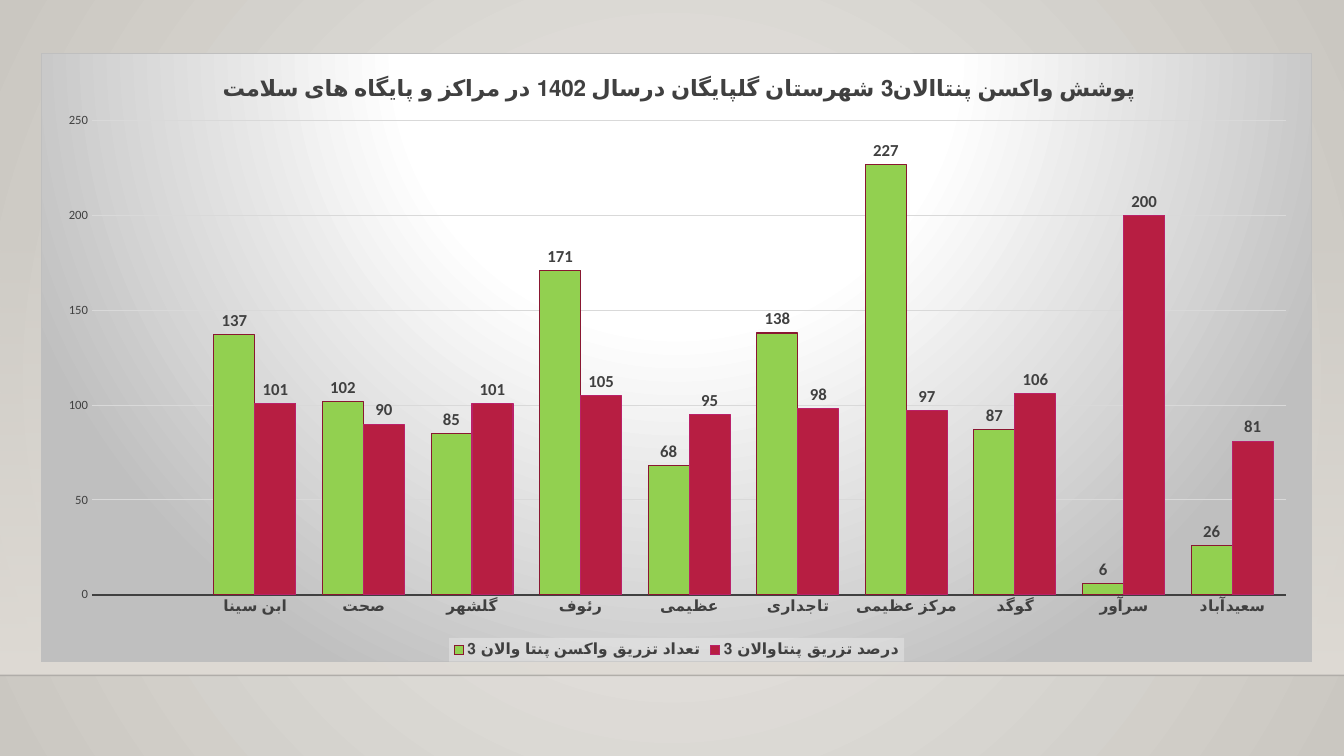
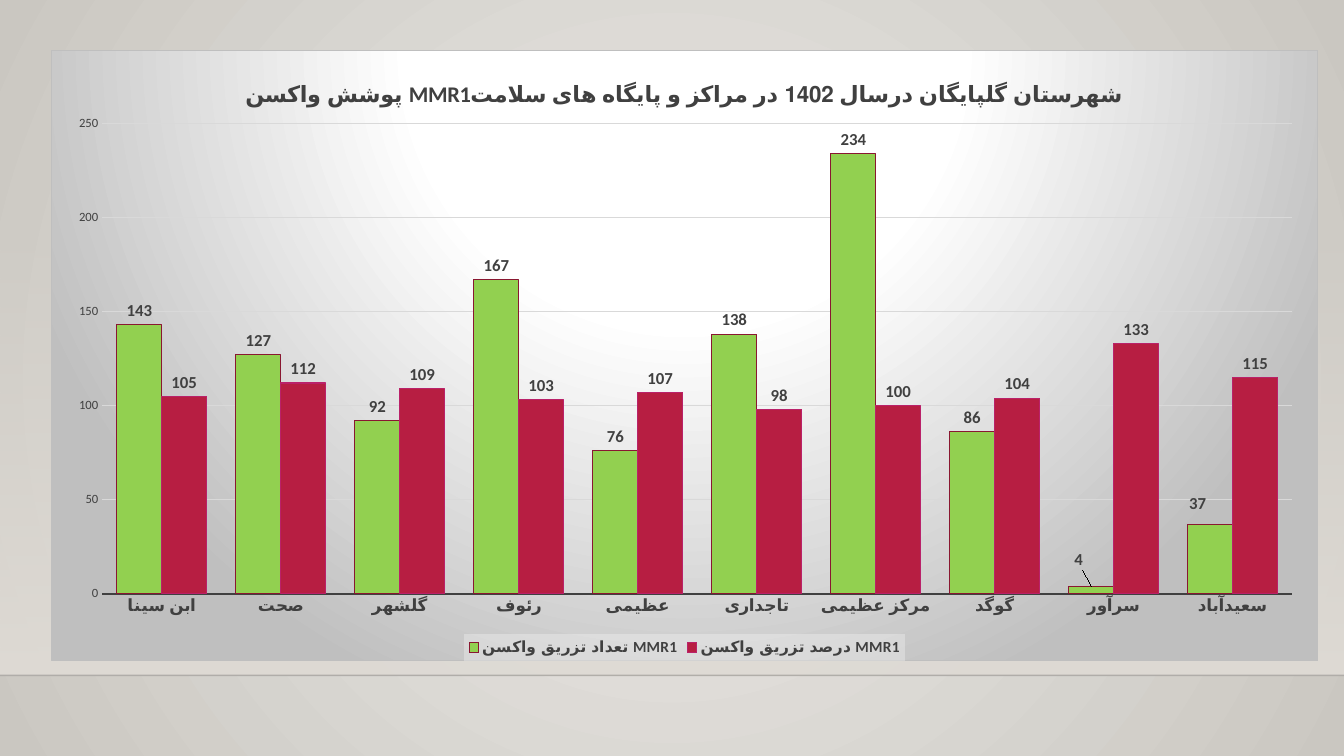
from dataclasses import dataclass, field
from typing import Optional

from pptx import Presentation, util as u
from pptx.chart import data as cd
from pptx.dml import color
from pptx.enum import chart as ce, shapes
from pptx.oxml import ns, parse_xml

FONT = "Calibri"
COLORS = {
    "bg_light": "ECEAE7", "bg_dark": "CAC7C1", "band": "DFDBD5", "rule": "000001",
    "text": "404040", "grid": "D9D9D9", "legend": "F2F2F2",
    "white": "FFFFFF", "grey": "BFBFBF",
    "count": "92D050", "count_line": "891731",
    "percent": "B71E42", "percent_line": "BA2169",
}
SERIES_STYLE = [("count", "count_line"), ("percent", "percent_line")]
CENTRES = ["ابن سینا", "صحت", "گلشهر", "رئوف", "عظیمی", "تاجداری",
           "مرکز عظیمی", "گوگد", "سرآور", "سعیدآباد"]


@dataclass
class CoverageChart:
    title: str
    box: tuple            # left, top, width, height in points
    title_at: tuple       # fractions of the chart
    plot_area: tuple      # fractions of the chart
    categories: list
    series: dict
    category_size: int
    label_shifts: dict = field(default_factory=dict)  # point of the first series: shift


CHARTS = [
    CoverageChart(
        "پوشش واکسن پنتاالان3 شهرستان گلپایگان درسال 1402 در مراکز و پایگاه های سلامت",
        (29, 38, 908.5, 435), (0.14, 0.03), (0.04, 0.11, 0.94, 0.78),
        ["", *CENTRES],
        {"تعداد تزریق واکسن پنتا والان 3":
            [None, 137, 102, 85, 171, 68, 138, 227, 87, 6, 26],
         "درصد تزریق پنتاوالان 3":
            [None, 101, 90, 101, 105, 95, 98, 97, 106, 200, 81]},
        11),
    CoverageChart(
        "پوشش واکسن MMR1شهرستان گلپایگان درسال 1402 در مراکز و پایگاه های سلامت",
        (36.5, 35.5, 905, 437), (0.15, 0.04), (0.04, 0.12, 0.94, 0.77),
        CENTRES,
        {"تعداد تزریق واکسن MMR1": [143, 127, 92, 167, 76, 138, 234, 86, 4, 37],
         "درصد تزریق واکسن MMR1": [105, 112, 109, 103, 107, 98, 100, 104, 133, 115]},
        12, {8: (-0.01, -0.02), 9: (-0.01, -0.01)}),
]


def rgb(name: str) -> color.RGBColor:
    return color.RGBColor.from_string(COLORS[name])


def solid_xml(name: str, alpha: int = 100, tag: str = "solidFill") -> str:
    return (f'<a:{tag} {ns.nsdecls("a")}><a:srgbClr val="{COLORS[name]}">'
            f'<a:alpha val="{alpha * 1000}"/></a:srgbClr></a:{tag}>')


def gradient_xml(stops: list, rect: Optional[tuple] = None) -> str:
    """Stops are (position, colour, alpha); rect gives a circular focus, else top to bottom."""
    gs = "".join(f'<a:gs pos="{pos * 1000}"><a:srgbClr val="{COLORS[name]}">'
                 f'<a:alpha val="{alpha * 1000}"/></a:srgbClr></a:gs>'
                 for pos, name, alpha in stops)
    shade = '<a:lin ang="5400000" scaled="0"/>'
    if rect:
        sides = " ".join(f'{side}="{v * 1000}"' for side, v in zip("ltrb", rect))
        shade = f'<a:path path="circle"><a:fillToRect {sides}/></a:path>'
    return (f'<a:gradFill {ns.nsdecls("a")} rotWithShape="1">'
            f'<a:gsLst>{gs}</a:gsLst>{shade}</a:gradFill>')


def replace_fill(parent, xml: str) -> None:
    parent.replace(parent.find(ns.qn("a:solidFill")), parse_xml(xml))


def set_layout(parent, index: int, place: tuple, edge: bool = True) -> None:
    """Place a chart part by fractions of the chart, from its edge or as a shift."""
    old = parent.find(ns.qn("c:layout"))
    if old is not None:
        parent.remove(old)
    parts = ['<c:layoutTarget val="inner"/>'] if len(place) == 4 else []
    if edge:
        parts += ['<c:xMode val="edge"/>', '<c:yMode val="edge"/>']
    parts += [f'<c:{key} val="{v}"/>' for key, v in zip("xywh", place)]
    parent.insert(index, parse_xml(
        f'<c:layout {ns.nsdecls("c")}><c:manualLayout>{"".join(parts)}'
        '</c:manualLayout></c:layout>'))


def style_font(font, size: float, bold: bool = True) -> None:
    font.name, font.size, font.bold = FONT, u.Pt(size), bold
    font.color.rgb = rgb("text")


def style_line(line, name: str, width: float) -> None:
    line.color.rgb = rgb(name)
    line.width = u.Pt(width)


def build_master(prs, s) -> None:
    """Give the master its background, band and rule (drawn on s, then moved)."""
    master = prs.slide_master
    master.background.fill.solid()
    replace_fill(master.element.find(".//" + ns.qn("p:bgPr")), gradient_xml(
        [(0, "bg_light", 100), (100, "bg_dark", 100)], (50, 50, 50, 50)))

    band = s.shapes.add_shape(shapes.MSO_SHAPE.RECTANGLE,
                              0, u.Pt(159), prs.slide_width, u.Pt(323.4))
    band.shadow.inherit = False
    band.line.fill.background()
    band.fill.solid()
    replace_fill(band.element.spPr, gradient_xml([(0, "band", 0), (100, "band", 100)]))

    rule = s.shapes.add_connector(shapes.MSO_CONNECTOR.STRAIGHT,
                                  0, u.Pt(482.4), prs.slide_width, u.Pt(482.4))
    style_line(rule.line, "rule", 1)
    spPr = rule.element.spPr
    replace_fill(spPr.find(ns.qn("a:ln")), solid_xml("rule", 20))
    spPr.append(parse_xml(f'<a:effectLst {ns.nsdecls("a")}/>'))

    for index, sp in enumerate((band, rule), start=2):
        master.shapes.element.insert(index, sp.element)


def style_axes(chart, category_size: int) -> None:
    cat, val = chart.category_axis, chart.value_axis
    for axis in (cat, val):
        axis.major_tick_mark = axis.minor_tick_mark = ce.XL_TICK_MARK.NONE
    style_font(cat.tick_labels.font, category_size)
    style_line(cat.format.line, "text", 1.5)
    style_font(val.tick_labels.font, 9, bold=False)
    val.format.line.fill.background()
    val.minimum_scale, val.maximum_scale, val.major_unit = 0, 250, 50
    val.has_major_gridlines = True
    style_line(val.major_gridlines.format.line, "grid", 0.75)


def style_series(chart, label_shifts: dict) -> None:
    plot = chart.plots[0]
    plot.gap_width, plot.overlap, plot.vary_by_categories = 65, 0, False
    for ser, (fill, line) in zip(plot.series, SERIES_STYLE):
        ser.invert_if_negative = False
        ser.format.fill.solid()
        ser.format.fill.fore_color.rgb = rgb(fill)
        style_line(ser.format.line, line, 0.75)
        labels = ser.data_labels
        labels.show_value = True
        labels.position = ce.XL_LABEL_POSITION.OUTSIDE_END
        style_font(labels.font, 12)

    first = plot.series[0]
    for index, shift in label_shifts.items():
        label = first.points[index].data_label
        label.position = ce.XL_LABEL_POSITION.OUTSIDE_END
        style_font(label.font, 12)
    for dLbl in first.data_labels._element.findall(ns.qn("c:dLbl")):
        index = int(dLbl.find(ns.qn("c:idx")).get("val"))
        set_layout(dLbl, 1, label_shifts[index], edge=False)


def add_coverage_chart(s, spec: CoverageChart) -> None:
    data = cd.CategoryChartData()
    data.categories = spec.categories
    for name, values in spec.series.items():
        data.add_series(name, values)
    chart = s.shapes.add_chart(ce.XL_CHART_TYPE.COLUMN_CLUSTERED,
                               *map(u.Pt, spec.box), data).chart
    chart.font.name, chart.font.size = FONT, u.Pt(10)

    # Title
    chart.has_title = True
    p = chart.chart_title.text_frame.paragraphs[0]
    p.text = spec.title
    style_font(p.runs[0].font, 16)
    set_layout(chart.chart_title._element, 1, spec.title_at)

    # Legend
    chart.has_legend = True
    legend = chart.legend
    legend.position = ce.XL_LEGEND_POSITION.BOTTOM
    legend.include_in_layout = False
    style_font(legend.font, 11)
    legend._element.find(ns.qn("c:txPr")).addprevious(parse_xml(
        f'<c:spPr {ns.nsdecls("c")}>{solid_xml("legend", 39)}</c:spPr>'))

    # Plot
    style_axes(chart, spec.category_size)
    style_series(chart, spec.label_shifts)
    root = chart.element if hasattr(chart, "element") else chart._chartSpace
    set_layout(root.find(".//" + ns.qn("c:plotArea")), 0, spec.plot_area)

    # Chart background and border
    backdrop = gradient_xml([(0, "white", 100), (39, "white", 100), (100, "grey", 100)],
                            (50, -80, 50, 180))
    root.find(ns.qn("c:chart")).addnext(parse_xml(
        f'<c:spPr {ns.nsdecls("c", "a")}>{backdrop}'
        f'<a:ln w="{u.Pt(0.75)}">{solid_xml("grey")}</a:ln></c:spPr>'))


def main() -> None:
    prs = Presentation()
    prs.slide_width, prs.slide_height = u.Pt(960), u.Pt(540)
    blank = prs.slide_layouts[6]
    slides = [prs.slides.add_slide(blank) for _ in CHARTS]
    build_master(prs, slides[0])
    for s, spec in zip(slides, CHARTS):
        add_coverage_chart(s, spec)
    prs.save("out.pptx")


if __name__ == "__main__":
    main()
